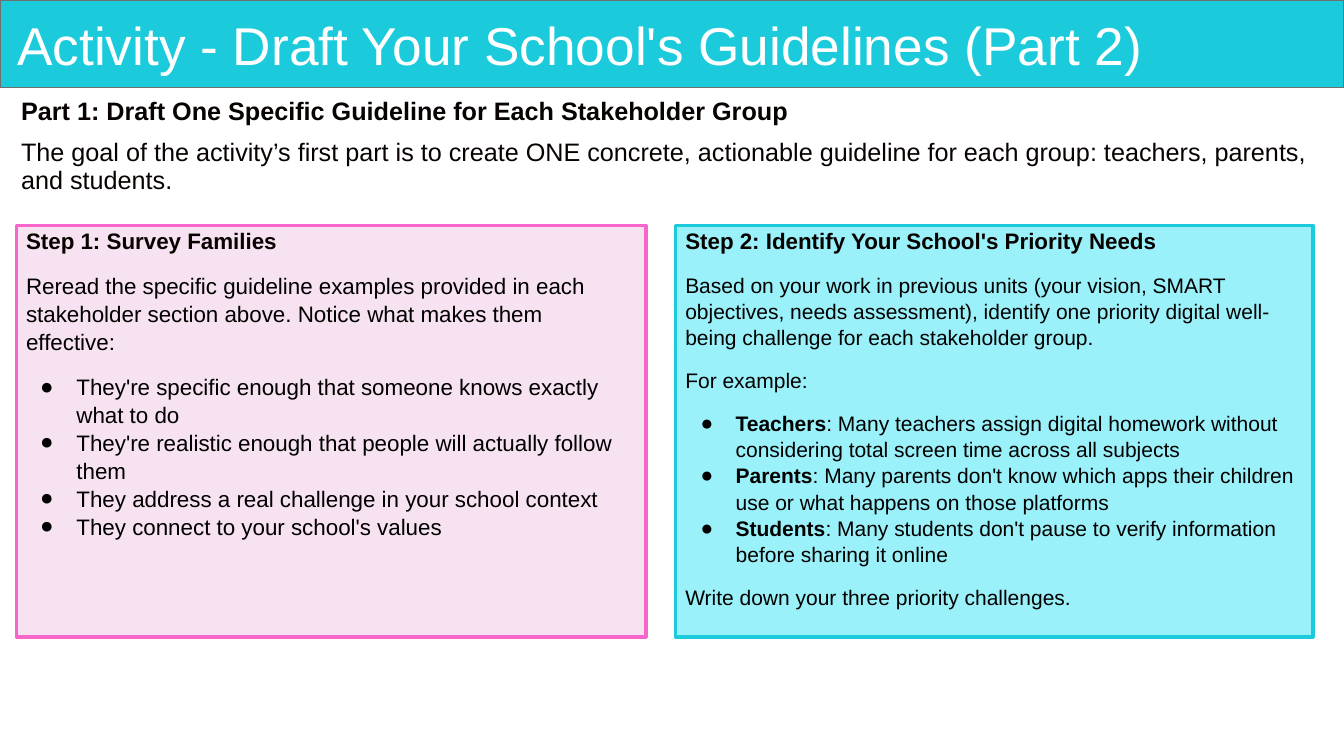
from pptx import Presentation
from pptx.dml.color import RGBColor
from pptx.enum.shapes import MSO_SHAPE as Shape
from pptx.enum.text import MSO_ANCHOR as Anchor, MSO_AUTO_SIZE as Auto, PP_ALIGN as Align
from pptx.oxml.ns import qn
from pptx.util import Pt
from lxml.etree import SubElement as Sub


def color(code):
    return RGBColor.from_string(code)


def write(frame, paras, inset=(7.2, 3.6)):
    frame.word_wrap = True
    frame.auto_size = Auto.NONE
    frame.margin_left = frame.margin_right = Pt(inset[0])
    frame.margin_top = frame.margin_bottom = Pt(inset[1])
    for i, (runs, size, ink, lead, before, after, hang) in enumerate(paras):
        para = frame.paragraphs[0] if i == 0 else frame.add_paragraph()
        para.alignment = Align.LEFT
        para.line_spacing = lead
        para.space_before = Pt(before)
        para.space_after = Pt(after)
        if hang:
            props = para._p.get_or_add_pPr()
            props.set("marL", str(Pt(36)))
            props.set("indent", str(-Pt(hang)))
            tint = Sub(props, qn("a:buClr"))
            Sub(tint, qn("a:srgbClr"), val="000000")
            Sub(props, qn("a:buFont"), typeface="Arial")
            Sub(props, qn("a:buChar"), char="●")
        for text, bold in runs:
            run = para.add_run()
            run.text = text
            run.font.name = "Arial"
            run.font.size = Pt(size)
            run.font.bold = bold
            run.font.color.rgb = color(ink)


deck = Presentation()
deck.slide_width, deck.slide_height = Pt(960), Pt(540)
slide = deck.slides.add_slide(deck.slide_layouts[5])
shapes = slide.shapes

title = shapes.title
title.left, title.top, title.width, title.height = Pt(8), Pt(6.5), Pt(940), Pt(56)
title.text_frame.vertical_anchor = Anchor.MIDDLE
head = [("Activity - Draft Your School's Guidelines (Part 2)", False)]
write(title.text_frame, [(head, 38, "FFFFFF", 0.9, 0, 0, 0)], (4.3, 4.3))

banner = shapes.add_shape(Shape.RECTANGLE, 0, 0, Pt(960), Pt(62.6))
banner.shadow.inherit = False
banner.fill.solid()
banner.fill.fore_color.rgb = color("1BCBDC")
banner.line.color.rgb = color("6C6E70")
banner.line.width = Pt(1)
shapes._spTree.insert(2, banner._element)

families = [
    ([("Reread the specific guideline examples provided in each stakeholder section above. "
       "Notice what makes them effective:", False)], 12, 0, 0),
    ([("They're specific enough that someone knows exactly what to do", False)], 12, 0, 26),
    ([("They're realistic enough that people will actually follow them", False)], 0, 0, 26),
    ([("They address a real challenge in your school context", False)], 0, 0, 26),
    ([("They connect to your school's values", False)], 0, 12, 26),
]
needs = [
    ([("Based on your work in previous units (your vision, SMART objectives, needs assessment), "
       "identify one priority digital well-being challenge for each stakeholder group.",
       False)], 12, 0, 0),
    ([("For example:", False)], 12, 0, 0),
    ([("Teachers", True), (": Many teachers assign digital homework without considering "
                           "total screen time across all subjects", False)], 12, 0, 25),
    ([("Parents", True), (": Many parents don't know which apps their children use "
                          "or what happens on those platforms", False)], 0, 0, 25),
    ([("Students", True), (": Many students don't pause to verify information "
                           "before sharing it online", False)], 0, 0, 25),
    ([("Write down your three priority challenges.", False)], 12, 12, 0),
]
steps = [
    (11.5, 450, "F6E2F0", "F766CA", "Step 1: Survey Families", 16, families),
    (482.4, 455.5, "9BF1F9", "1BCBDC", "Step 2: Identify Your School's Priority Needs", 15, needs),
]
for left, width, fill, edge, name, size, body in steps:
    card = shapes.add_shape(Shape.RECTANGLE, Pt(left), Pt(161), Pt(width), Pt(294))
    card.shadow.inherit = False
    card.fill.solid()
    card.fill.fore_color.rgb = color(fill)
    card.line.color.rgb = color(edge)
    card.line.width = Pt(2.25)
    card.text_frame.vertical_anchor = Anchor.TOP
    paras = [([(name, True)], 16, "080301", 0.9, 0, 0, 0)]
    for runs, before, after, hang in body:
        paras.append((runs, size, "000000", 1.04, before, after, hang))
    write(card.text_frame, paras)

intro = shapes.add_textbox(Pt(8), Pt(67), Pt(940), Pt(43))
write(intro.text_frame, [
    ([("Part 1: Draft One Specific Guideline for Each Stakeholder Group", True)],
     18, "080301", 0.9, 0, 0, 0),
    ([("The goal of the activity’s first part is to create ONE concrete, actionable guideline "
       "for each group: teachers, parents, and students.", False)],
     18, "080301", 0.9, 10, 0, 0),
])

deck.save("out.pptx")
